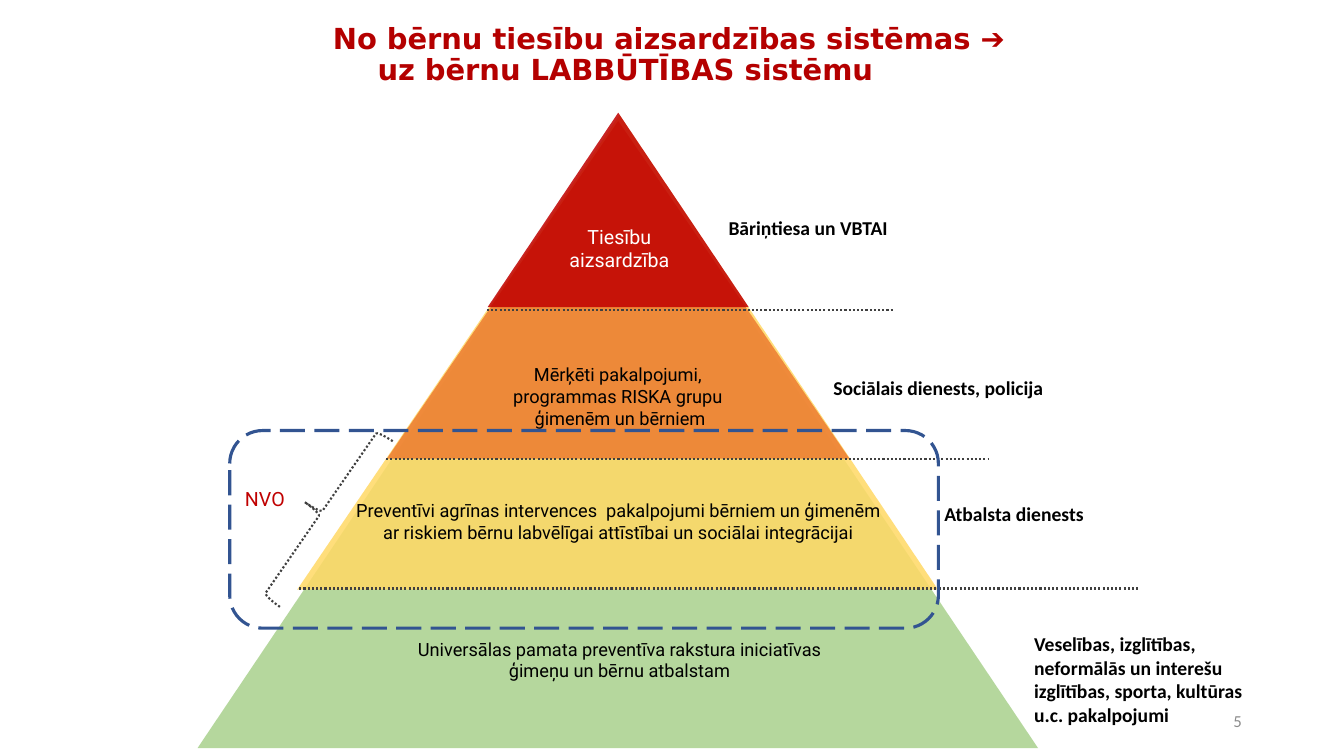
from lxml.etree import SubElement
from pptx import Presentation
from pptx.dml.color import RGBColor
from pptx.enum.dml import MSO_LINE
from pptx.enum.shapes import MSO_CONNECTOR, MSO_SHAPE
from pptx.enum.text import MSO_ANCHOR, MSO_AUTO_SIZE, PP_ALIGN
from pptx.oxml.ns import qn
from pptx.util import Cm, Pt

BLACK = RGBColor(0, 0, 0)
WHITE = RGBColor(0xFF, 0xFF, 0xFF)
TITLE_RED = RGBColor(0xB4, 0x00, 0x00)
RED = RGBColor(0xC0, 0x00, 0x00)
ORANGE = RGBColor(0xED, 0x7D, 0x31)
YELLOW = RGBColor(0xFF, 0xD9, 0x66)
GREEN = RGBColor(0xA9, 0xD1, 0x8E)
BLUE = RGBColor(0x32, 0x54, 0x91)
DARK = RGBColor(0x40, 0x40, 0x40)
GREY = RGBColor(0x8C, 0x8C, 0x8C)

# left, top, width, height in cm; apex position; colour
LEVELS = [
    (4.98, 3.1, 21.18, 15.75, 0.5, GREEN),
    (7.49, 2.9, 16.15, 11.96, 0.503, YELLOW),
    (9.75, 3.05, 11.66, 8.51, 0.5, ORANGE),
    (12.29, 2.84, 6.58, 4.9, 0.5, RED),
]
LEVEL_TEXTS = [
    (10.03, 15.95, 11.16, 1.75, 13, BLACK,
     "Universālas pamata preventīva rakstura iniciatīvas\nģimeņu un bērnu atbalstam"),
    (7.98, 12.45, 15.19, 2.18, 13, BLACK,
     "Preventīvi agrīnas intervences  pakalpojumi bērniem un ģimenēm\n"
     "ar riskiem bērnu labvēlīgai attīstībai un sociālai integrācijai"),
    (10.85, 9.04, 9.55, 2.64, 13, BLACK,
     "Mērķēti pakalpojumi, \vprogrammas RISKA grupu \vģimenēm un bērniem"),
    (13.69, 5.54, 3.84, 2.06, 14, WHITE, "Tiesību\naizsardzība"),
    (5, 12.14, 3.35, 1.24, 14, RED, "NVO"),
]
PROVIDERS = [
    (18.11, 5.31, 4.75, 1.4, "Bāriņtiesa un VBTAI"),
    (20.75, 9.35, 7.19, 1.07, "Sociālais dienests, policija"),
    (23.55, 12.52, 4.45, 1.73, "Atbalsta dienests"),
    (25.81, 15.8, 6.48, 2.84,
     "Veselības, izglītības, neformālās un interešu izglītības, sporta, "
     "kultūras u.c. pakalpojumi"),
]
DIVIDERS = [(12.27, 22.5, 7.81), (9.73, 24.92, 11.56), (7.54, 28.7, 14.83)]


class PyramidSlide:
    def __init__(self, prs):
        self.slide = prs.slides.add_slide(prs.slide_layouts[5])
        self.shapes = self.slide.shapes

    def style(self, p, size, color, font, bold=False, align=PP_ALIGN.LEFT):
        p.alignment = align
        p.font.size, p.font.name, p.font.bold = Pt(size), font, bold
        p.font.color.rgb = color

    def title(self, text, box, first_indent):
        """Fill the title; the indent shifts its first line to the right."""
        sp = self.shapes.title
        sp.left, sp.top, sp.width, sp.height = map(Cm, box)
        tf = sp.text_frame
        tf.text = text
        tf.word_wrap = True
        tf.auto_size = MSO_AUTO_SIZE.NONE
        tf.vertical_anchor = MSO_ANCHOR.MIDDLE
        p = tf.paragraphs[0]
        pPr = p._p.get_or_add_pPr()
        pPr.set("marL", "0")
        pPr.set("indent", str(Cm(first_indent)))
        p.line_spacing = 0.9
        self.style(p, 20.7, TITLE_RED, "DejaVu Sans", True, PP_ALIGN.CENTER)

    def text(self, text, box, size, color, font, bold=False,
             align=PP_ALIGN.LEFT, anchor=MSO_ANCHOR.TOP):
        tf = self.shapes.add_textbox(*map(Cm, box)).text_frame
        tf.text = text
        tf.word_wrap = True
        tf.vertical_anchor = anchor
        for p in tf.paragraphs:
            self.style(p, size, color, font, bold, align)

    def triangle(self, box, apex, color):
        sp = self.shapes.add_shape(MSO_SHAPE.ISOSCELES_TRIANGLE, *map(Cm, box))
        sp.shadow.inherit = False
        sp.adjustments[0] = apex
        sp.fill.solid()
        sp.fill.fore_color.rgb = color
        clr = sp.fill._xPr.find(qn("a:solidFill"))[0]
        SubElement(clr, qn("a:alpha")).set("val", "86000")
        sp.line.fill.background()

    def stroke(self, line, color, width, dash):
        line.color.rgb = color
        line.width = Pt(width)
        line.dash_style = dash

    def outline(self, kind, box, color, width, dash, rotation=0):
        sp = self.shapes.add_shape(kind, *map(Cm, box))
        sp.shadow.inherit = False
        sp.rotation = rotation
        sp.fill.background()
        self.stroke(sp.line, color, width, dash)

    def divider(self, x1, x2, y):
        line = self.shapes.add_connector(
            MSO_CONNECTOR.STRAIGHT, Cm(x1), Cm(y), Cm(x2), Cm(y))
        self.stroke(line.line, DARK, 1.5, MSO_LINE.ROUND_DOT)
        SubElement(line._element.spPr, qn("a:effectLst"))


def main():
    prs = Presentation()
    prs.slide_width, prs.slide_height = Cm(33.87), Cm(19.05)
    s = PyramidSlide(prs)
    s.title("No bērnu tiesību aizsardzības sistēmas ➔\vuz bērnu LABBŪTĪBAS sistēmu",
            (5.36, 0.46, 20.8, 1.88), 2.2)
    for *box, apex, color in LEVELS:
        s.triangle(box, apex, color)
    for *box, size, color, text in LEVEL_TEXTS:
        s.text(text, box, size, color, "Roboto", align=PP_ALIGN.CENTER)
    for *box, text in PROVIDERS:
        s.text(text, box, 14, BLACK, "Calibri", bold=True)
    for x1, x2, y in DIVIDERS:
        s.divider(x1, x2, y)
    s.outline(MSO_SHAPE.LEFT_BRACE, (7.59, 10.41, 0.99, 5.05),
              DARK, 1.5, MSO_LINE.ROUND_DOT, rotation=34.7)
    s.outline(MSO_SHAPE.ROUNDED_RECTANGLE, (5.79, 10.85, 17.86, 4.98),
              BLUE, 2.25, MSO_LINE.LONG_DASH)
    s.text("5", (23.93, 17.65, 7.62, 1.02), 12, GREY, "Calibri",
           align=PP_ALIGN.RIGHT, anchor=MSO_ANCHOR.MIDDLE)
    prs.save("out.pptx")


if __name__ == "__main__":
    main()
